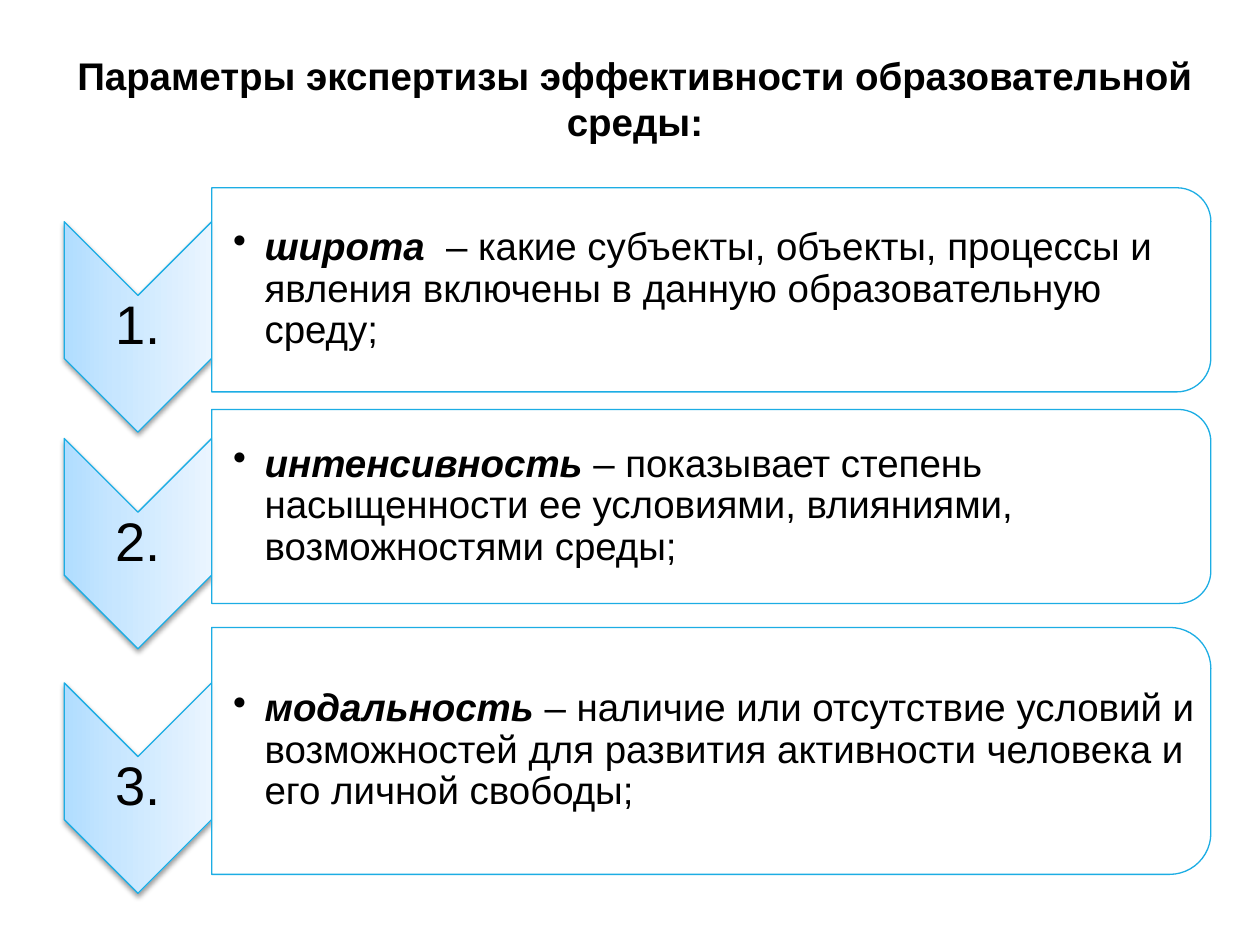
from lxml.etree import SubElement
from pptx import Presentation
from pptx.dml.color import RGBColor
from pptx.enum.shapes import MSO_SHAPE
from pptx.enum.text import MSO_ANCHOR, MSO_AUTO_SIZE, PP_ALIGN
from pptx.oxml.ns import qn
from pptx.util import Inches, Pt

FONT = "Arial"
COLORS = {
    "text": "000000", "line": "1CADE4", "panel": "FFFFFF", "shade": "000000",
    "deep": "B0DDFF", "mid": "C7E6FF", "pale": "EAF5FF",
}
TITLE = "Параметры экспертизы эффективности образовательной среды:"

# Chevron top, panel top, panel height, term, meaning
ROWS = [
    (1.76, 1.49, 1.62, "широта  ",
     "– какие субъекты, объекты, процессы и явления включены "
     "в данную образовательную среду;"),
    (3.48, 3.25, 1.54, "интенсивность",
     " – показывает степень насыщенности ее условиями, влияниями, "
     "возможностями среды;"),
    (5.42, 4.98, 1.96, "модальность",
     " – наличие или отсутствие условий и возможностей для развития "
     "активности человека и его личной свободы;"),
]


def rgb(name):
    return RGBColor.from_string(COLORS[name])


def add_run(para, text, size, bold=False, slant=False):
    run = para.add_run()
    run.text = text
    font = run.font
    font.name, font.size = FONT, Pt(size)
    font.bold, font.italic = bold, slant
    font.color.rgb = rgb("text")


def add_tint(parent, name, alpha=None):
    tint = SubElement(parent, qn("a:srgbClr"), val=COLORS[name])
    if alpha:
        SubElement(tint, qn("a:alpha"), val=str(alpha * 1000))


def add_turned(slide, kind, left, top, width, height):
    """Add a shape turned by 90 degrees that fills the given box."""
    x = left + (width - height) / 2
    y = top + (height - width) / 2
    shape = slide.shapes.add_shape(
        kind, Inches(x), Inches(y), Inches(height), Inches(width))
    shape.rotation = 90
    shape.shadow.inherit = False
    shape.line.color.rgb = rgb("line")
    shape.line.width = Pt(0.75)
    return shape


def add_label(slide, left, top, width, height, inset):
    box = slide.shapes.add_textbox(
        Inches(left), Inches(top), Inches(width), Inches(height))
    frame = box.text_frame
    frame.word_wrap = True
    frame.vertical_anchor = MSO_ANCHOR.MIDDLE
    frame.margin_left = Inches(inset)
    frame.margin_top = frame.margin_right = frame.margin_bottom = Inches(0.02)
    para = frame.paragraphs[0]
    para.line_spacing = 0.9
    return para


def add_title(slide, left, top, width, height):
    title = slide.shapes.title
    title.left, title.top = Inches(left), Inches(top)
    title.width, title.height = Inches(width), Inches(height)
    frame = title.text_frame
    frame.word_wrap = True
    frame.auto_size = MSO_AUTO_SIZE.NONE
    frame.vertical_anchor = MSO_ANCHOR.TOP
    para = frame.paragraphs[0]
    para.alignment = PP_ALIGN.CENTER
    para.space_before = Pt(4.4)
    add_run(para, TITLE, 22, bold=True)


def add_chevron(slide, left, top, width, height, mark):
    shape = add_turned(slide, MSO_SHAPE.CHEVRON, left, top, width, height)
    # Three-stop gradient, deep at the bottom
    shape.fill.gradient()
    shape.fill.gradient_angle = 90
    props = shape._element.spPr
    stops = props.find(qn("a:gradFill")).find(qn("a:gsLst"))
    stops.clear()
    for place, name in ((0, "deep"), (35, "mid"), (100, "pale")):
        add_tint(SubElement(stops, qn("a:gs"), pos=str(place * 1000)), name)
    # Soft shadow below
    shade = SubElement(
        props.find(qn("a:effectLst")), qn("a:outerShdw"),
        blurRad=str(Pt(3.1)), dist=str(Pt(1.6)), dir="5400000",
        rotWithShape="0")
    add_tint(shade, "shade", 38)
    # Number in the middle
    para = add_label(slide, left, top + height / 2 - 0.25, width, 0.5, 0.02)
    para.alignment = PP_ALIGN.CENTER
    para.space_after = Pt(10.85)
    add_run(para, mark, 31)


def add_panel(slide, left, top, width, height, term, sense):
    shape = add_turned(slide, MSO_SHAPE.ROUND_2_SAME_RECTANGLE,
                       left, top, width, height)
    shape.fill.solid()
    shape.fill.fore_color.rgb = rgb("panel")
    tint = shape._element.spPr.find(qn("a:solidFill"))[0]
    SubElement(tint, qn("a:alpha"), val="90000")
    # Bulleted definition
    para = add_label(slide, left, top + 0.08, width - 0.08, height - 0.16, 0.17)
    para.level = 1
    para.space_after = Pt(3.3)
    props = para._p.get_or_add_pPr()
    props.set("marL", str(Inches(0.25)))
    props.set("indent", str(Inches(-0.25)))
    SubElement(props, qn("a:buChar"), char="•")
    add_run(para, term, 22, bold=True, slant=True)
    add_run(para, sense, 22)


def main():
    deck = Presentation()
    deck.slide_width, deck.slide_height = Inches(10), Inches(7.5)
    slide = deck.slides.add_slide(deck.slide_layouts[5])
    add_title(slide, 0.35, 0.36, 9.38, 1)
    for num, (peak, top, height, term, sense) in enumerate(ROWS, 1):
        add_chevron(slide, 0.51, peak, 1.17, 1.67, f"{num}.")
        add_panel(slide, 1.68, top, 7.93, height, term, sense)
    deck.save("out.pptx")


if __name__ == "__main__":
    main()
